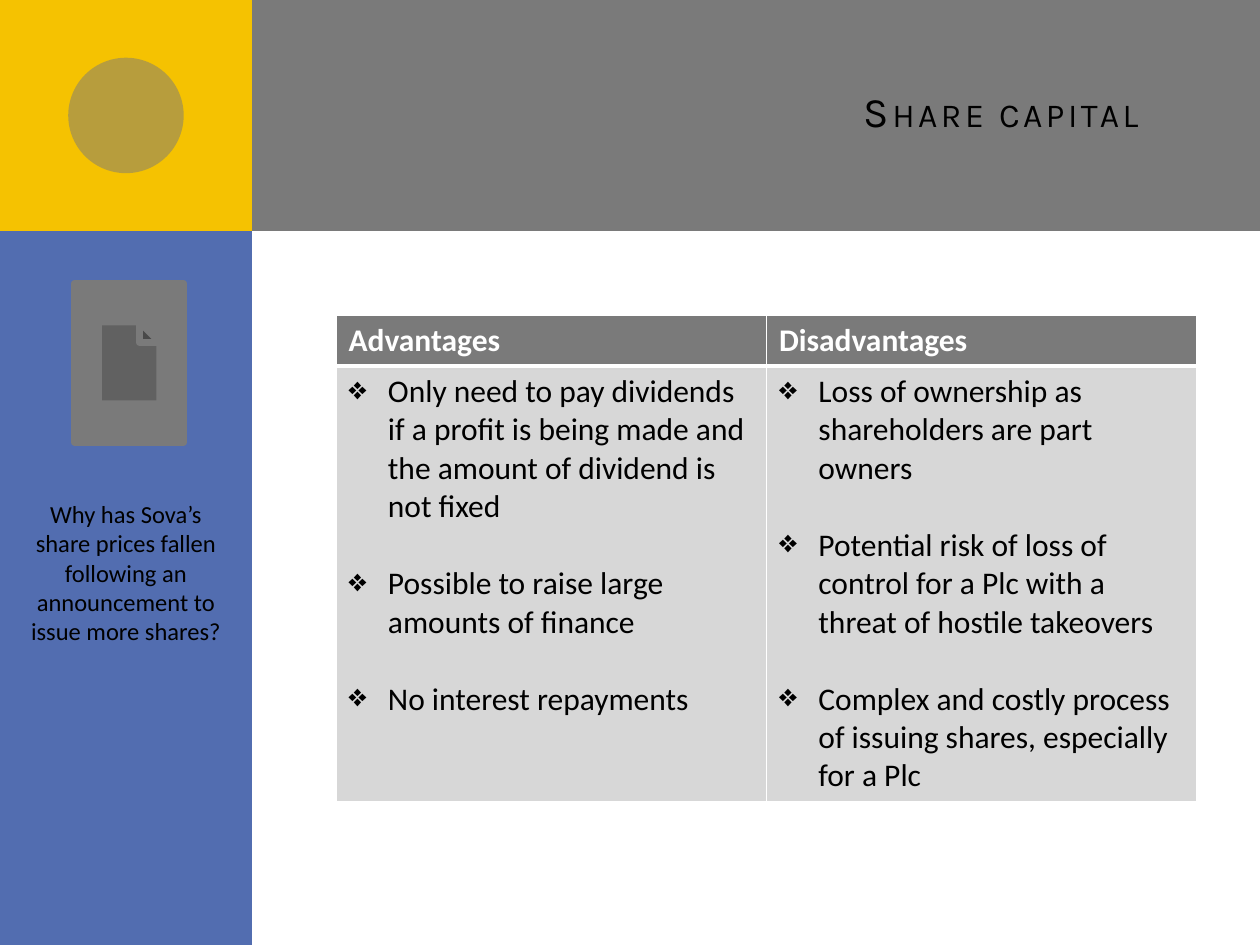
import dataclasses

import pptx
import pptx.dml.color
import pptx.enum.shapes
import pptx.enum.text
import pptx.oxml.ns
import pptx.oxml.xmlchemy
import pptx.util

Pt = pptx.util.Pt
RGBColor = pptx.dml.color.RGBColor
MSO_SHAPE = pptx.enum.shapes.MSO_SHAPE
PP_ALIGN = pptx.enum.text.PP_ALIGN
MSO_ANCHOR = pptx.enum.text.MSO_ANCHOR
MSO_AUTO_SIZE = pptx.enum.text.MSO_AUTO_SIZE
OxmlElement = pptx.oxml.xmlchemy.OxmlElement

GREY = RGBColor(0x7A, 0x7A, 0x7A)
BLUE = RGBColor(0x52, 0x6D, 0xB0)
YELLOW = RGBColor(0xF5, 0xC2, 0x01)
LIGHT_GREY = RGBColor(0xD7, 0xD7, 0xD7)
BLACK = RGBColor(0, 0, 0)
WHITE = RGBColor(0xFF, 0xFF, 0xFF)

BODY_FONT = "Calibri"
TITLE_FONT = "Karla"
SIDEBAR_WIDTH = 144
BANNER_HEIGHT = 132
CONTENT_LEFT = 192
CONTENT_WIDTH = 492
HEADER_HEIGHT = 29.2
BODY_HEIGHT = 245
BULLET_INDENT = 22.5
BULLET_GAP = 22


@dataclasses.dataclass(frozen=True)
class Block:
    kind: int
    left: float
    top: float
    width: float
    height: float
    fill: RGBColor
    opacity: int = 100
    line_width: float = 0


@dataclasses.dataclass(frozen=True)
class Column:
    heading: str
    points: tuple[str, ...]


BLOCKS = (
    Block(MSO_SHAPE.RECTANGLE, 36, 0, 684, BANNER_HEIGHT, GREY),
    Block(MSO_SHAPE.RECTANGLE, 0, 0, SIDEBAR_WIDTH, 540, BLUE),
    Block(MSO_SHAPE.RECTANGLE, 0, 0, SIDEBAR_WIDTH, BANNER_HEIGHT, YELLOW),
    Block(MSO_SHAPE.OVAL, 39, 33, 66, 66, GREY, opacity=50),
    Block(MSO_SHAPE.ACTION_BUTTON_DOCUMENT, 42.5, 162, 62.5, 90.7, GREY, line_width=4),
)

COLUMNS = (
    Column("Advantages", (
        "Only need to pay dividends if a profit is being made and the amount of dividend is not fixed",
        "Possible to raise large amounts of finance",
        "No interest repayments",
    )),
    Column("Disadvantages", (
        "Loss of ownership as shareholders are part owners",
        "Potential risk of loss of control for a Plc with a threat of hostile takeovers",
        "Complex and costly process of issuing shares, especially for a Plc",
    )),
)


def add_block(slide, block: Block) -> None:
    shape = slide.shapes.add_shape(
        block.kind, Pt(block.left), Pt(block.top), Pt(block.width), Pt(block.height))
    shape.shadow.inherit = False
    shape.fill.solid()
    shape.fill.fore_color.rgb = block.fill
    if block.opacity < 100:
        color = shape.element.spPr.find(".//" + pptx.oxml.ns.qn("a:srgbClr"))
        alpha = OxmlElement("a:alpha")
        alpha.set("val", str(block.opacity * 1000))
        color.append(alpha)
    if block.line_width:
        shape.line.color.rgb = block.fill
        shape.line.width = Pt(block.line_width)
    else:
        shape.line.fill.background()


def add_run(paragraph, text: str, size: float, color: RGBColor,
            font: str = BODY_FONT, bold: bool = False):
    run = paragraph.add_run()
    run.text = text
    run.font.name = font
    run.font.size = Pt(size)
    run.font.bold = bold
    run.font.color.rgb = color
    return run


def add_title(slide, text: str) -> None:
    title = slide.shapes.title
    title.left, title.top = Pt(CONTENT_LEFT), Pt(18)
    title.width, title.height = Pt(CONTENT_WIDTH), Pt(90)
    title.text_frame.auto_size = MSO_AUTO_SIZE.NONE
    title.text_frame.vertical_anchor = MSO_ANCHOR.MIDDLE
    paragraph = title.text_frame.paragraphs[0]
    paragraph.alignment = PP_ALIGN.RIGHT
    run = add_run(paragraph, text, 24, BLACK, TITLE_FONT)
    properties = run._r.get_or_add_rPr()
    properties.set("cap", "small")
    properties.set("spc", "200")
    # The banner is drawn after the placeholder, so bring the title to the front.
    title.element.getparent().append(title.element)


def add_bullet(paragraph) -> None:
    properties = paragraph._p.get_or_add_pPr()
    properties.set("marL", str(Pt(BULLET_INDENT)))
    properties.set("indent", str(-Pt(BULLET_INDENT)))
    bullet = OxmlElement("a:buChar")
    bullet.set("char", "❖")
    properties.append(bullet)


def format_cell(cell, fill: RGBColor, top: float, bottom: float) -> None:
    """Fill the cell and draw white borders, with the given top and bottom widths."""
    cell.fill.solid()
    cell.fill.fore_color.rgb = fill
    properties = cell._tc.get_or_add_tcPr()
    sides = (("a:lnL", 1), ("a:lnR", 1), ("a:lnT", top), ("a:lnB", bottom))
    for position, (tag, width) in enumerate(sides):
        line = OxmlElement(tag)
        line.set("w", str(Pt(width)))
        solid = OxmlElement("a:solidFill")
        color = OxmlElement("a:srgbClr")
        color.set("val", str(WHITE))
        solid.append(color)
        line.append(solid)
        properties.insert(position, line)


def add_comparison_table(slide, columns: tuple[Column, ...]) -> None:
    table = slide.shapes.add_table(
        2, len(columns), Pt(CONTENT_LEFT), Pt(180),
        Pt(CONTENT_WIDTH), Pt(HEADER_HEIGHT + BODY_HEIGHT)).table
    table.horz_banding = False
    table.rows[0].height = Pt(HEADER_HEIGHT)
    table.rows[1].height = Pt(BODY_HEIGHT)
    for index, column in enumerate(columns):
        header, body = table.cell(0, index), table.cell(1, index)
        format_cell(header, GREY, top=1, bottom=3)
        format_cell(body, LIGHT_GREY, top=3, bottom=1)
        add_run(header.text_frame.paragraphs[0], column.heading, 18, WHITE, bold=True)
        frame = body.text_frame
        for number, point in enumerate(column.points):
            paragraph = frame.add_paragraph() if number else frame.paragraphs[0]
            if number:
                paragraph.space_before = Pt(BULLET_GAP)
            add_bullet(paragraph)
            add_run(paragraph, point, 18, BLACK)


def add_sidebar_question(slide, text: str) -> None:
    box = slide.shapes.add_textbox(Pt(5.5), Pt(281.5), Pt(133), Pt(92))
    box.text_frame.word_wrap = True
    box.text_frame.auto_size = MSO_AUTO_SIZE.SHAPE_TO_FIT_TEXT
    paragraph = box.text_frame.paragraphs[0]
    paragraph.alignment = PP_ALIGN.CENTER
    add_run(paragraph, text, 14, BLACK)


def main() -> None:
    presentation = pptx.Presentation()
    presentation.slide_width, presentation.slide_height = Pt(720), Pt(540)
    slide = presentation.slides.add_slide(presentation.slide_layouts[5])
    for block in BLOCKS:
        add_block(slide, block)
    add_title(slide, "Share capital")
    add_comparison_table(slide, COLUMNS)
    add_sidebar_question(
        slide, "Why has Sova’s share prices fallen following an announcement to issue more shares?")
    presentation.save("out.pptx")


if __name__ == "__main__":
    main()
